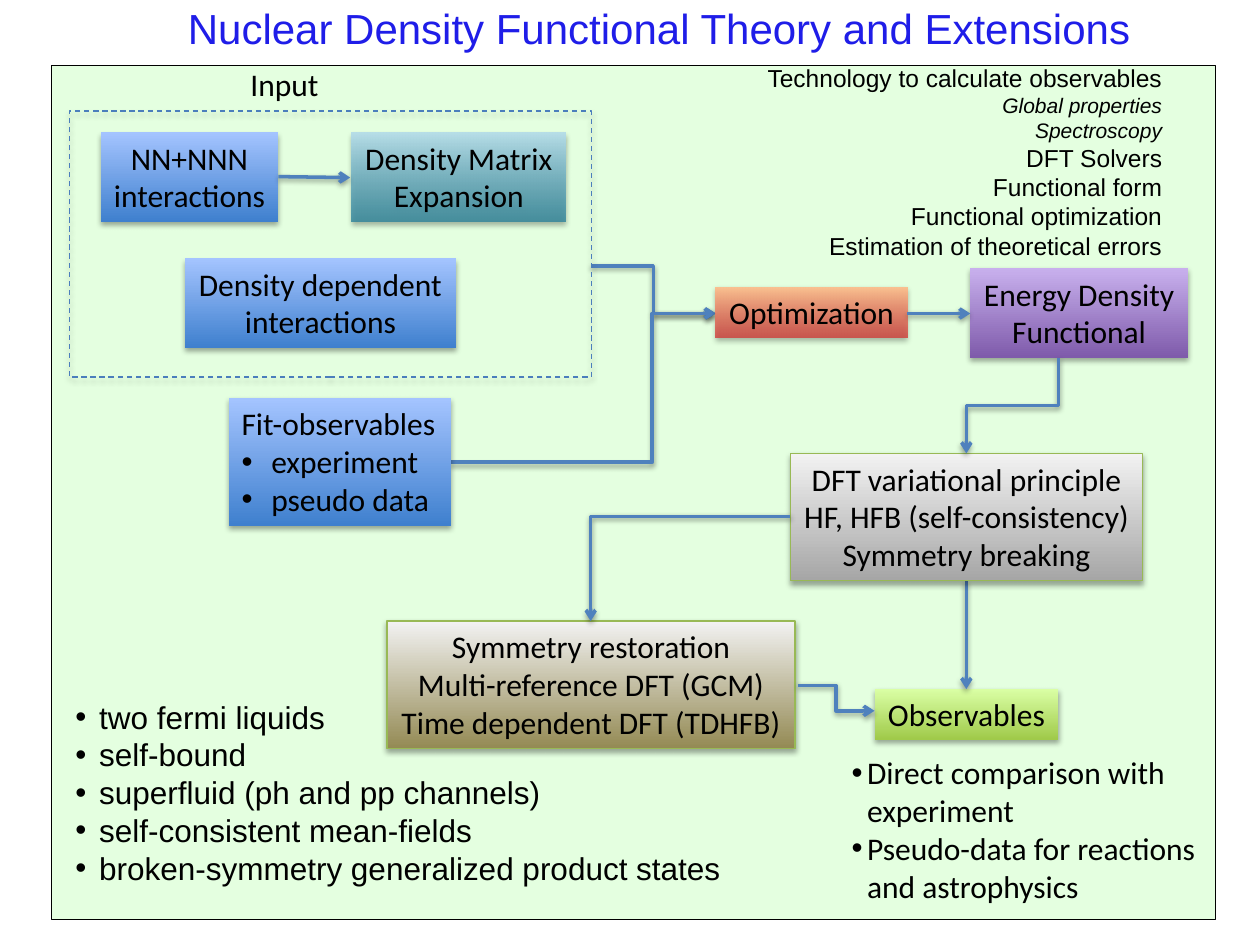
from lxml import etree
from pptx import Presentation
from pptx.dml.color import RGBColor
from pptx.enum.dml import MSO_LINE
from pptx.enum.shapes import MSO_CONNECTOR, MSO_SHAPE
from pptx.enum.text import MSO_ANCHOR, PP_ALIGN
from pptx.oxml.ns import qn
from pptx.util import Cm, Pt

RECTANGLE = MSO_SHAPE.RECTANGLE
STRAIGHT, ELBOW = MSO_CONNECTOR.STRAIGHT, MSO_CONNECTOR.ELBOW
LEFT, CENTER, RIGHT = PP_ALIGN.LEFT, PP_ALIGN.CENTER, PP_ALIGN.RIGHT
DASH, TOP = MSO_LINE.DASH, MSO_ANCHOR.TOP

BLUE = ("3F80CE", "A4C4FF")
TEAL = ("31859C", "B7DEE8")
RED = ("D1403C", "FAC090")
PURPLE = ("7F5BAB", "C8B0ED")
GREEN = ("A0CA4A", "DAFFA5")
GRAY = ("A6A6A6", "F2F2F2")
OLIVE = ("948A54", "F2F2F2")
OUTLINE = "98B955"


def color(value):
    return RGBColor.from_string(value)


def add_element(parent, tag, **attributes):
    element = etree.SubElement(parent, qn(tag))
    for name, value in attributes.items():
        element.set(name, str(value))
    return element


class Diagram:
    """Holds the style and the slide on which the diagram is built."""

    ink = "000000"
    link_color = "4F81BD"
    body_font = "Calibri"
    heading_font = "Arial"

    def __init__(self, slide):
        self.slide = slide

    def add_shadow(self, effects, distance, opacity):
        shadow = add_element(effects, "a:outerShdw", blurRad=40000, dist=distance,
                             dir=5400000, rotWithShape=0)
        shade = add_element(shadow, "a:srgbClr", val=self.ink)
        add_element(shade, "a:alpha", val=opacity * 1000)

    def add_frame(self, left, top, width, height, fill=None, line=None, dash=None, shadow=True):
        shape = self.slide.shapes.add_shape(RECTANGLE, Cm(left), Cm(top), Cm(width), Cm(height))
        if fill:
            shape.fill.solid()
            shape.fill.fore_color.rgb = color(fill)
        else:
            shape.fill.background()
        if line:
            shape.line.color.rgb = color(line)
            shape.line.width = Pt(0.75)
            shape.line.dash_style = dash
        else:
            shape.line.fill.background()
        shape.shadow.inherit = False
        if shadow:
            self.add_shadow(shape.element.spPr.find(qn("a:effectLst")), 23000, 35)
        return shape

    def add_box(self, left, top, width, height, lines, gradient, line=None, opacity=100,
                align=CENTER, bullets_from=None):
        shape = self.add_frame(left, top, width, height, line=line)
        shape.fill.gradient()
        shape.fill.gradient_angle = 90
        for stop, value, position in zip(shape.fill.gradient_stops, gradient, (0, 1)):
            stop.color.rgb = color(value)
            stop.position = position
        if opacity < 100:
            dark = next(shape.element.spPr.iter(qn("a:srgbClr")))
            add_element(dark, "a:alpha", val=opacity * 1000)
        self.set_lines(shape, lines, 18, self.body_font, align, bullets_from, 0.6)
        shape.text_frame.word_wrap = False

    def add_text(self, left, top, width, height, lines, size=18, font=body_font, ink=ink,
                 align=LEFT, bullets_from=None, indent=0):
        shape = self.slide.shapes.add_textbox(Cm(left), Cm(top), Cm(width), Cm(height))
        self.set_lines(shape, lines, size, font, align, bullets_from, indent, ink)
        shape.text_frame.word_wrap = True
        return shape

    def set_lines(self, shape, lines, size, font, align, bullets_from, indent, ink=ink):
        frame = shape.text_frame
        frame.text = "\n".join(lines)
        frame.vertical_anchor = TOP
        for index, paragraph in enumerate(frame.paragraphs):
            paragraph.alignment = align
            if bullets_from is not None and index >= bullets_from:
                properties = paragraph._p.get_or_add_pPr()
                properties.set("marL", str(Cm(indent)))
                properties.set("indent", str(-Cm(indent)))
                add_element(properties, "a:buFont", typeface=self.heading_font)
                add_element(properties, "a:buChar", char="•")
            for run in paragraph.runs:
                run.font.size = Pt(size)
                run.font.name = font
                run.font.color.rgb = color(ink)

    def add_link(self, start, end, kind=STRAIGHT, bend=None, corner=False, downward=False):
        if downward:
            center_x, center_y = (start[0] + end[0]) / 2, (start[1] + end[1]) / 2
            half_x, half_y = (end[1] - start[1]) / 2, (start[0] - end[0]) / 2
            start = (center_x - half_x, center_y - half_y)
            end = (center_x + half_x, center_y + half_y)
        connector = self.slide.shapes.add_connector(kind, *map(Cm, start + end))
        properties = connector.element.spPr
        geometry = properties.find(qn("a:prstGeom"))
        if downward:
            properties.find(qn("a:xfrm")).set("rot", "5400000")
        if corner:
            geometry.set("prst", "bentConnector2")
        if bend:
            guides = geometry.find(qn("a:avLst"))
            add_element(guides, "a:gd", name="adj1", fmla=f"val {round(bend * 100000)}")
        connector.line.color.rgb = color(self.link_color)
        connector.line.width = Pt(2)
        add_element(connector.get_or_add_ln(), "a:tailEnd", type="arrow")
        self.add_shadow(add_element(properties, "a:effectLst"), 20000, 38)


def main():
    presentation = Presentation()
    presentation.slide_width, presentation.slide_height = Cm(25.4), Cm(19.05)
    diagram = Diagram(presentation.slides.add_slide(presentation.slide_layouts[6]))

    diagram.add_frame(1.04, 1.32, 23.47, 17.22, "E4FFE0", "000000", shadow=False)
    diagram.add_box(2.03, 2.67, 3.58, 1.8, ["NN+NNN", "interactions"], BLUE)
    diagram.add_box(7.09, 2.67, 4.32, 1.8, ["Density Matrix", "Expansion"], TEAL, opacity=81)
    diagram.add_text(4.8, 1.19, 2.2, 1.02, ["Input"])
    diagram.add_box(19.56, 5.41, 4.39, 1.8, ["Energy Density", "Functional"], PURPLE)
    diagram.add_link((11.91, 5.36), (14.43, 6.32), ELBOW, bend=0.5)
    diagram.add_link((9.09, 9.32), (14.43, 6.32), ELBOW, bend=0.76)
    diagram.add_box(17.63, 13.89, 3.71, 1.02, ["Observables"], GREEN)
    diagram.add_text(16.92, 15.06, 7.77, 3.33,
                     ["Direct comparison with experiment",
                      "Pseudo-data for reactions and astrophysics"],
                     bullets_from=0, indent=0.31)
    diagram.add_link((19.48, 11.71), (19.48, 13.89))
    diagram.add_box(3.73, 5.21, 5.46, 1.8, ["Density dependent", "interactions"], BLUE)
    diagram.add_link((5.61, 3.56), (7.06, 3.58))
    diagram.add_box(4.62, 8.03, 4.47, 2.57, ["Fit-observables", "experiment", "pseudo data"],
                    BLUE, align=LEFT, bullets_from=1)
    diagram.add_box(14.43, 5.79, 3.86, 1.02, ["Optimization"], RED, opacity=81)
    diagram.add_frame(1.4, 2.24, 10.52, 5.36, line="4B7EBC", dash=DASH)
    diagram.add_link((18.29, 6.32), (19.56, 6.32))
    diagram.add_box(15.93, 9.14, 7.11, 2.57,
                    ["DFT variational principle", "HF, HFB (self-consistency)",
                     "Symmetry breaking"], GRAY, OUTLINE)
    diagram.add_box(7.8, 12.52, 8.23, 2.57,
                    ["Symmetry restoration", "Multi-reference DFT (GCM)",
                     "Time dependent DFT (TDHFB)"], OLIVE, OUTLINE)
    diagram.add_link((15.93, 10.41), (11.91, 12.52), ELBOW, corner=True)
    diagram.add_link((16.08, 13.82), (17.63, 14.33), ELBOW, bend=0.5)
    diagram.add_link((21.34, 7.21), (19.48, 9.14), ELBOW, bend=0.5, downward=True)
    diagram.add_text(3.43, -0.08, 19.71, 1.3, ["Nuclear Density Functional Theory and Extensions"],
                     24, diagram.heading_font, "1F1DE8", CENTER)
    diagram.add_text(1.27, 13.94, 13.59, 4.09,
                     ["two fermi liquids", "self-bound", "superfluid (ph and pp channels)",
                      "self-consistent mean-fields", "broken-symmetry generalized product states"],
                     font=diagram.heading_font, bullets_from=0, indent=0.48)
    technology = diagram.add_text(
        10.57, 1.14, 13.11, 4.27,
        ["Technology to calculate observables", "Global properties", "Spectroscopy",
         "DFT Solvers", "Functional form", "Functional optimization",
         "Estimation of theoretical errors"], 14, diagram.heading_font, align=RIGHT)
    for paragraph in technology.text_frame.paragraphs[1:3]:
        for run in paragraph.runs:
            run.font.size = Pt(12)
            run.font.italic = True

    presentation.save("out.pptx")


if __name__ == "__main__":
    main()
